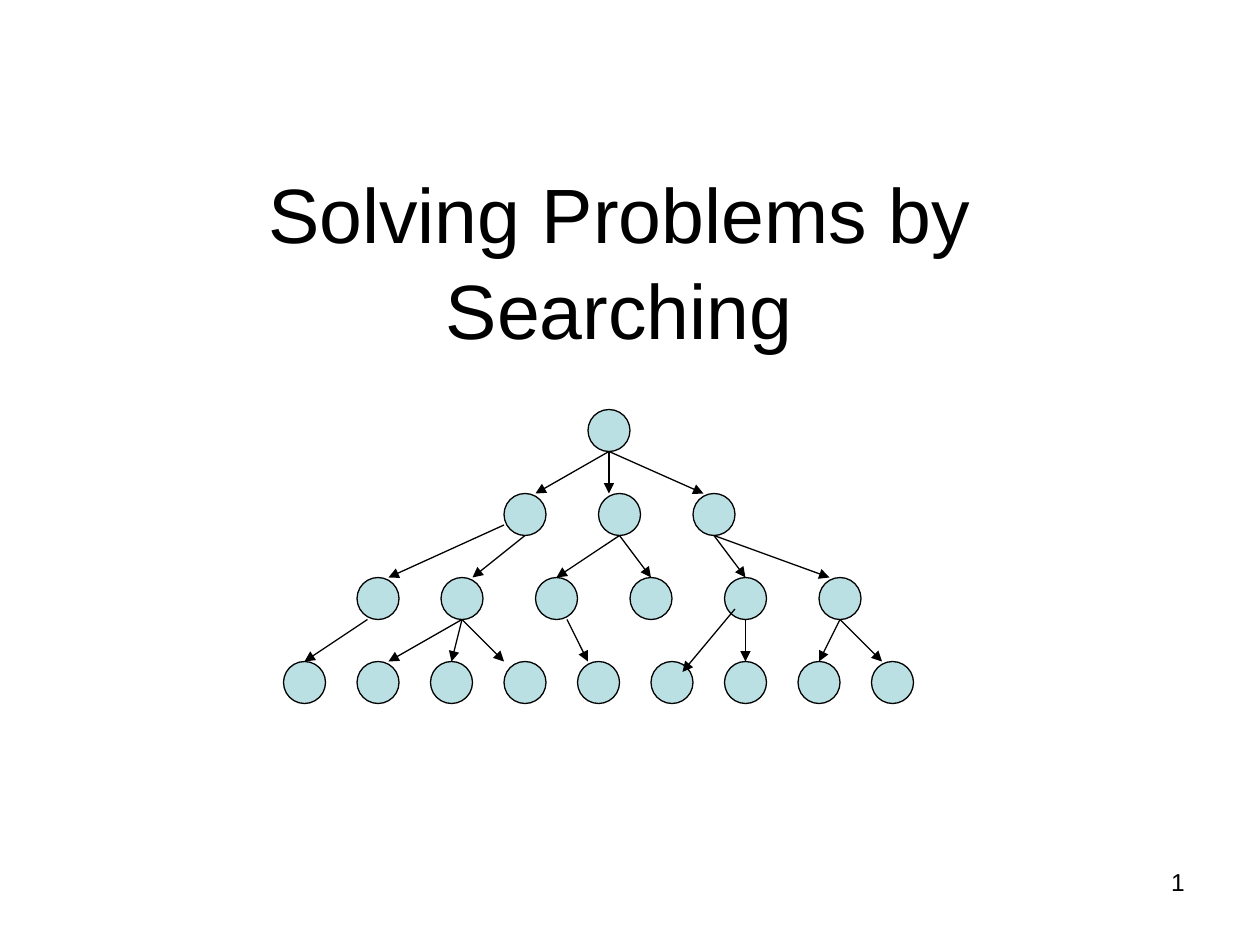
from typing import NamedTuple

from lxml import etree
from pptx import Presentation
from pptx.dml.color import RGBColor
from pptx.enum.shapes import MSO_CONNECTOR, MSO_SHAPE
from pptx.enum.text import MSO_ANCHOR, PP_ALIGN
from pptx.oxml.ns import qn
from pptx.util import Inches, Pt

BLACK = RGBColor(0x00, 0x00, 0x00)
WHITE = RGBColor(0xFF, 0xFF, 0xFF)
NODE_FILL = RGBColor(0xBB, 0xE0, 0xE3)
STRAIGHT = MSO_CONNECTOR.STRAIGHT
OVAL = MSO_SHAPE.OVAL
CENTER, RIGHT = PP_ALIGN.CENTER, PP_ALIGN.RIGHT
TOP, MIDDLE = MSO_ANCHOR.TOP, MSO_ANCHOR.MIDDLE

FONT = "Arial"
COLUMNS, ROWS = 120, 90
UNIT = Inches(10) / COLUMNS
LINE_WIDTH = Pt(0.75)
NODE_SIZE = 4
FIRST_LEVEL_ROW, LEVEL_STEP = 39, 8


class Label(NamedTuple):
    text: str
    col: float
    row: float
    width: float
    height: float
    size: float
    align: PP_ALIGN
    anchor: MSO_ANCHOR
    spacing: float


class Edge(NamedTuple):
    level: int
    parent: int
    child: int
    start: tuple[int, int] = (0, 0)
    end: tuple[int, int] = (0, 0)


LABELS = [
    Label("1", 86, 82, 28, 6.25, 14, RIGHT, TOP, 1),
    Label("Solving Problems by Searching", 8, 15, 102, 19.3, 44, CENTER, MIDDLE, 1.04),
]

LEVELS = [
    [56],
    list(range(48, 67, 9)),
    [34, *range(42, 79, 9)],
    list(range(27, 84, 7)),
]

EDGES = [
    Edge(0, 0, 0, end=(1, 0)),
    Edge(0, 0, 1, end=(-1, 0)),
    Edge(0, 0, 2, end=(-1, 0)),
    Edge(1, 0, 0, start=(-2, -1), end=(1, 0)),
    Edge(1, 0, 1, end=(1, 0)),
    Edge(1, 1, 2),
    Edge(1, 1, 3),
    Edge(1, 2, 4),
    Edge(1, 2, 5, end=(-1, 0)),
    Edge(2, 0, 0, start=(-1, 0)),
    Edge(2, 1, 1, end=(1, 0)),
    Edge(2, 1, 2),
    Edge(2, 1, 3, end=(-2, 0)),
    Edge(2, 2, 4, start=(1, 0), end=(-1, 0)),
    Edge(2, 4, 5, start=(-1, -1), end=(1, 1)),
    Edge(2, 4, 6),
    Edge(2, 5, 7),
    Edge(2, 5, 8, end=(-1, 0)),
]


def grid(value: float) -> int:
    return round(value * UNIT)


def level_row(level: int) -> int:
    return FIRST_LEVEL_ROW + level * LEVEL_STEP


def draw_label(s, label: Label) -> None:
    box = (label.col, label.row, label.width, label.height)
    sp = s.shapes.add_textbox(*map(grid, box))
    tf = sp.text_frame
    tf.word_wrap = True
    tf.vertical_anchor = label.anchor
    p = tf.paragraphs[0]
    p.alignment = label.align
    p.line_spacing = label.spacing
    r = p.add_run()
    r.text = label.text
    r.font.name = FONT
    r.font.size = Pt(label.size)
    r.font.color.rgb = BLACK


def draw_node(s, level: int, col: int) -> None:
    box = (col, level_row(level), NODE_SIZE, NODE_SIZE)
    sp = s.shapes.add_shape(OVAL, *map(grid, box))
    sp.shadow.inherit = False
    sp.fill.solid()
    sp.fill.fore_color.rgb = NODE_FILL
    sp.line.color.rgb = BLACK
    sp.line.width = LINE_WIDTH


def draw_edge(s, edge: Edge) -> None:
    half = NODE_SIZE / 2
    ends = (
        LEVELS[edge.level][edge.parent] + half + edge.start[0],
        level_row(edge.level) + NODE_SIZE + edge.start[1],
        LEVELS[edge.level + 1][edge.child] + half + edge.end[0],
        level_row(edge.level + 1) + edge.end[1],
    )
    sp = s.shapes.add_connector(STRAIGHT, *map(grid, ends))
    sp.line.color.rgb = BLACK
    sp.line.width = LINE_WIDTH
    etree.SubElement(sp.line._get_or_add_ln(), qn("a:tailEnd"), type="triangle")
    etree.SubElement(sp._element.spPr, qn("a:effectLst"))


def main() -> None:
    prs = Presentation()
    prs.slide_width = grid(COLUMNS)
    prs.slide_height = grid(ROWS)
    s = prs.slides.add_slide(prs.slide_layouts[6])
    s.background.fill.solid()
    s.background.fill.fore_color.rgb = WHITE
    for label in LABELS:
        draw_label(s, label)
    for level, cols in enumerate(LEVELS):
        for col in cols:
            draw_node(s, level, col)
    for edge in EDGES:
        draw_edge(s, edge)
    prs.save("out.pptx")


if __name__ == "__main__":
    main()
